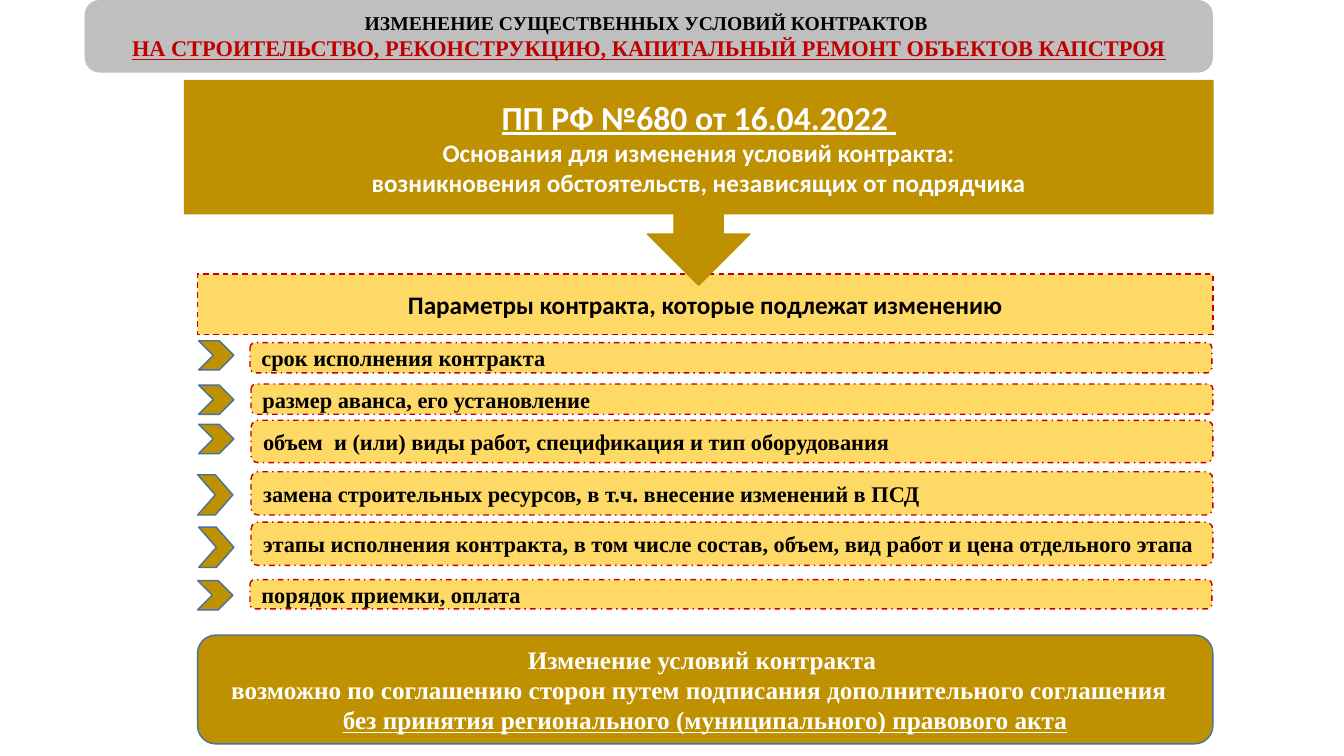
from pptx import Presentation
from pptx.dml.color import RGBColor
from pptx.enum.dml import MSO_LINE_DASH_STYLE as DASH
from pptx.enum.shapes import MSO_SHAPE as SHAPE
from pptx.enum.text import MSO_ANCHOR, PP_ALIGN
from pptx.util import Inches, Pt

BLACK = RGBColor(0x00, 0x00, 0x00)
WHITE = RGBColor(0xFF, 0xFF, 0xFF)
GRAY = RGBColor(0xBF, 0xBF, 0xBF)
RED = RGBColor(0xC0, 0x00, 0x00)
GOLD = RGBColor(0xBF, 0x90, 0x00)
DARK_GOLD = RGBColor(0xBD, 0x8E, 0x00)
YELLOW = RGBColor(0xFF, 0xD9, 0x66)
BLUE = RGBColor(0x43, 0x73, 0x9E)
SERIF, SANS = "Times New Roman", "Calibri"

deck = Presentation()
deck.slide_width, deck.slide_height = Inches(13.33), Inches(7.5)
page = deck.slides.add_slide(deck.slide_layouts[6])


def add_box(kind, place, fill, line=None, dash=None):
    box = page.shapes.add_shape(kind, *(Inches(length) for length in place))
    box.shadow.inherit = False
    box.fill.solid()
    box.fill.fore_color.rgb = fill
    if line is None:
        box.line.fill.background()
    else:
        box.line.color.rgb = line
        box.line.width = Pt(1)
    if dash is not None:
        box.line.dash_style = dash
    return box


def write(box, font, lines, align=PP_ALIGN.CENTER):
    """Each line is (text, size, colour, underlined)."""
    frame = box.text_frame
    frame.word_wrap = True
    frame.vertical_anchor = MSO_ANCHOR.MIDDLE
    for number, (text, size, color, underline) in enumerate(lines):
        para = frame.add_paragraph() if number else frame.paragraphs[0]
        para.alignment = align
        span = para.add_run()
        span.text = text
        span.font.name = font
        span.font.size = Pt(size)
        span.font.bold = True
        span.font.underline = underline
        span.font.color.rgb = color


# Title banner
banner = add_box(SHAPE.ROUNDED_RECTANGLE, (0.84, 0, 11.19, 0.72), GRAY)
banner.adjustments[0] = 0.204
write(banner, SERIF, [
    ("ИЗМЕНЕНИЕ СУЩЕСТВЕННЫХ УСЛОВИЙ КОНТРАКТОВ ", 14, BLACK, False),
    ("НА СТРОИТЕЛЬСТВО, РЕКОНСТРУКЦИЮ, КАПИТАЛЬНЫЙ РЕМОНТ ОБЪЕКТОВ КАПСТРОЯ",
     16, RED, True),
])

# Contract parameters: chevron left, top and height, then bar left, top and height
parameters = [
    ("срок исполнения контракта", 1.97, 3.38, 0.29, 2.48, 3.4, 0.3),
    ("размер аванса, его установление", 1.97, 3.82, 0.29, 2.49, 3.81, 0.3),
    ("объем  и (или) виды работ, спецификация и тип оборудования",
     1.97, 4.21, 0.29, 2.49, 4.17, 0.42),
    ("замена строительных ресурсов, в т.ч. внесение изменений в ПСД",
     1.96, 4.71, 0.4, 2.49, 4.68, 0.43),
    ("этапы исполнения контракта, в том числе состав, объем, вид работ и цена отдельного этапа",
     1.97, 5.23, 0.4, 2.49, 5.18, 0.43),
    ("порядок приемки, оплата", 1.96, 5.76, 0.29, 2.48, 5.75, 0.29),
]
for text, mark_left, mark_top, mark_height, left, top, height in parameters:
    add_box(SHAPE.CHEVRON, (mark_left, mark_top, 0.35, mark_height), GOLD, BLUE)
    bar = add_box(SHAPE.ROUNDED_RECTANGLE, (left, top, 9.54, height),
                  YELLOW, RED, DASH.DASH_DOT)
    write(bar, SERIF, [(text, 16, BLACK, False)], PP_ALIGN.LEFT)

# Conclusion
conclusion = add_box(SHAPE.ROUNDED_RECTANGLE, (1.96, 6.3, 10.07, 1.08), GOLD, BLUE)
write(conclusion, SERIF, [
    ("Изменение условий контракта ", 18, WHITE, False),
    ("возможно по соглашению сторон путем подписания дополнительного соглашения  ",
     18, WHITE, False),
    ("без принятия регионального (муниципального) правового акта", 18, WHITE, True),
])

# Heading of the parameter list
heading = add_box(SHAPE.RECTANGLE, (1.96, 2.72, 10.07, 0.6), YELLOW, RED, DASH.DASH)
write(heading, SANS, [
    ("Параметры контракта, которые подлежат изменению", 18, BLACK, False),
])

# Decree callout pointing down at the heading
decree = add_box(SHAPE.DOWN_ARROW_CALLOUT, (1.83, 0.8, 10.2, 2.03), GOLD, DARK_GOLD)
for index, value in enumerate((0.239, 0.25, 0.25, 0.65)):
    decree.adjustments[index] = value
write(decree, SANS, [
    ("ПП РФ №680 от 16.04.2022 ", 24, WHITE, True),
    ("Основания для изменения условий контракта:", 18, WHITE, False),
    ("возникновения обстоятельств, независящих от подрядчика", 18, WHITE, False),
])

deck.save("out.pptx")
